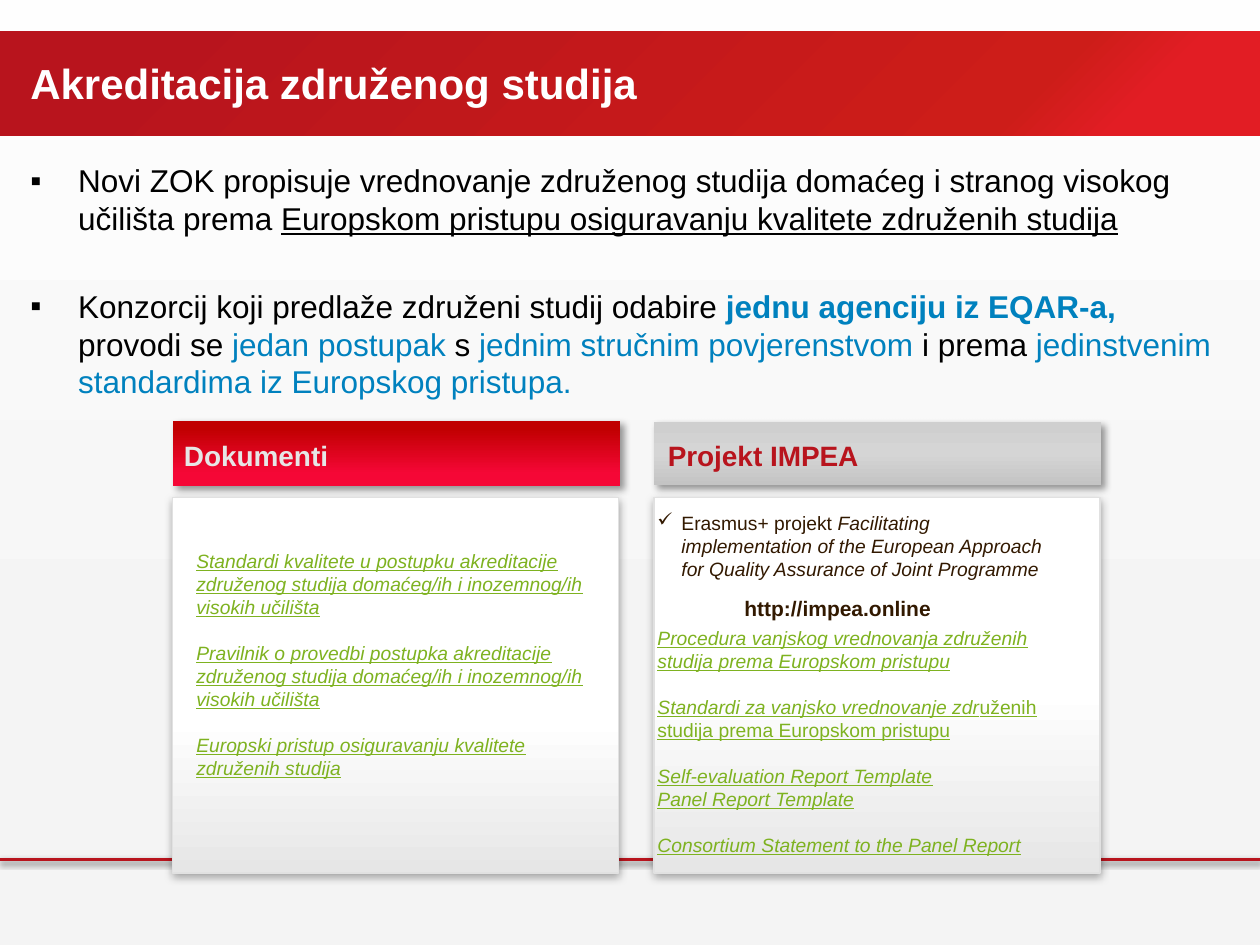
from dataclasses import dataclass
from typing import NamedTuple

from lxml.etree import SubElement
from pptx import Presentation
from pptx.dml.color import RGBColor
from pptx.enum.shapes import MSO_CONNECTOR as Connector, MSO_SHAPE as Shape
from pptx.enum.text import MSO_ANCHOR as Anchor, MSO_AUTO_SIZE as AutoSize, PP_ALIGN as Align
from pptx.oxml.ns import qn
from pptx.util import Inches, Pt

COLORS = {
    "red": "B8141D", "white": "FFFFFF", "black": "000000", "blue": "0081BE",
    "green": "7EB220", "brown": "321900", "pale": "E6E6E6", "edge": "E1E1E1",
}
PAGE_STOPS = [(0, "FEFEFE"), (74, "F4F4F4"), (83, "F4F4F4"), (100, "F7F7F7")]
BAND_STOPS = [(11, "E21D24"), (20, "CD1D19"), (89, "B8141D")]
GRAY_STOPS = [(0, "CFCFCF"), (50, "D5D5D5"), (100, "C4C4C4")]
RED_STOPS = [(11, "F50736"), (20, "F50736"), (89, "C00000")]


class Shadow(NamedTuple):
    alpha: int
    blur: float
    distance: float
    angle: int


LINE_SHADOW = Shadow(38, 3.1, 1.6, 90)
HEADER_SHADOW = Shadow(40, 4, 3, 45)
PANEL_SHADOW = Shadow(35, 5, 1.8, 90)


@dataclass
class Span:
    text: str
    color: str = "black"
    bold: bool = False
    italic: bool = False
    underline: bool = False


@dataclass
class Para:
    spans: list[Span]
    before: float = 0
    bullet: str = ""
    indent: float = 0


@dataclass
class Card:
    left: float
    header_top: float
    header_height: float
    stops: list
    angle: int
    panel_stop: int
    label_left: float
    label: Span


def link(text: str, before: float = 0) -> Para:
    return Para([Span(text, "green", italic=True, underline=True)], before)


def set_gradient(fill, holder, stops: list, angle: int) -> None:
    """Fill with (percent, colour) stops at a clockwise angle in degrees."""
    fill.gradient()
    gradient = holder.find(qn("a:gradFill"))
    for child in list(gradient):
        gradient.remove(child)
    stop_list = SubElement(gradient, qn("a:gsLst"))
    for percent, color in stops:
        stop = SubElement(stop_list, qn("a:gs"), pos=str(percent * 1000))
        SubElement(stop, qn("a:srgbClr"), val=color)
    SubElement(gradient, qn("a:lin"), ang=str(angle * 60000), scaled="0")


def add_shadow(properties, shadow: Shadow) -> None:
    effects = properties.find(qn("a:effectLst"))
    if effects is None:
        effects = SubElement(properties, qn("a:effectLst"))
    outer = SubElement(effects, qn("a:outerShdw"), blurRad=str(Pt(shadow.blur)),
                       dist=str(Pt(shadow.distance)), dir=str(shadow.angle * 60000),
                       algn="ctr", rotWithShape="0")
    color = SubElement(outer, qn("a:srgbClr"), val=COLORS["black"])
    SubElement(color, qn("a:alpha"), val=str(shadow.alpha * 1000))


def add_block(page, place: tuple, stops: list, angle: int,
              shadow: Shadow | None = None, edge: str = ""):
    block = page.shapes.add_shape(Shape.RECTANGLE, *map(Inches, place))
    set_gradient(block.fill, block.element.spPr, stops, angle)
    if edge:
        block.line.color.rgb = RGBColor.from_string(COLORS[edge])
        block.line.width = Pt(0.75)
    else:
        block.line.fill.background()
    block.shadow.inherit = False
    if shadow:
        add_shadow(block.element.spPr, shadow)


def write(box, paras: list[Para], size: float, **frame_format) -> None:
    frame = box.text_frame
    formats = {"word_wrap": True, "auto_size": AutoSize.NONE,
               "vertical_anchor": Anchor.TOP, **frame_format}
    for name, value in formats.items():
        setattr(frame, name, value)
    for index, item in enumerate(paras):
        para = frame.paragraphs[0] if index == 0 else frame.add_paragraph()
        properties = para._p.get_or_add_pPr()
        properties.set("marL", str(Inches(item.indent)))
        properties.set("indent", str(-Inches(item.indent)))
        if item.bullet:
            SubElement(properties, qn("a:buChar"), char=item.bullet)
        else:
            SubElement(properties, qn("a:buNone"))
        para.alignment = Align.LEFT
        para.space_before = Pt(item.before)
        for span in item.spans:
            run = para.add_run()
            run.text = span.text
            run.font.color.rgb = RGBColor.from_string(COLORS[span.color])
            for name, value in {"name": "Arial", "size": Pt(size), "bold": span.bold,
                                "italic": span.italic, "underline": span.underline}.items():
                setattr(run.font, name, value)


def add_text(page, place: tuple, paras: list[Para], size: float, **frame_format) -> None:
    write(page.shapes.add_textbox(*map(Inches, place)), paras, size, **frame_format)


def move(box, place: tuple) -> None:
    """Place a placeholder and bring it to the front."""
    for name, value in zip(("left", "top", "width", "height"), place):
        setattr(box, name, Inches(value))
    box.element.getparent().append(box.element)


def add_card(page, card: Card) -> None:
    add_block(page, (card.left, card.header_top, 3.55, card.header_height),
              card.stops, card.angle, HEADER_SHADOW)
    panel_stops = [(0, COLORS["pale"]), (card.panel_stop, COLORS["white"]), (100, COLORS["white"])]
    add_block(page, (card.left, 3.95, 3.54, 2.98), panel_stops, 270, PANEL_SHADOW, "edge")
    add_text(page, (card.label_left, 3.45, 2.67, 0.32), [Para([card.label])], 16,
             vertical_anchor=Anchor.MIDDLE, margin_left=0, margin_right=0)


BODY = [
    Para([Span("Novi ZOK propisuje vrednovanje združenog studija domaćeg i stranog "
               "visokog učilišta prema "),
          Span("Europskom pristupu osiguravanju kvalitete združenih studija", underline=True)],
         bullet="▪", indent=0.38),
    Para([Span("Konzorcij koji predlaže združeni studij odabire "),
          Span("jednu agenciju iz EQAR-a, ", "blue", bold=True),
          Span("provodi se "), Span("jedan postupak ", "blue"),
          Span("s "), Span("jednim stručnim povjerenstvom ", "blue"),
          Span("i prema "), Span("jedinstvenim standardima iz Europskog pristupa.", "blue")],
         before=28.5, bullet="▪", indent=0.38),
]
CARDS = [
    Card(5.19, 3.35, 0.5, GRAY_STOPS, 90, 49, 5.3, Span("Projekt IMPEA", "red", bold=True)),
    Card(1.37, 3.34, 0.52, RED_STOPS, 270, 41, 1.46, Span("Dokumenti", "pale", bold=True)),
]
GAP = 13
DOCUMENTS = [
    link("Standardi kvalitete u postupku akreditacije združenog studija "
         "domaćeg/ih i inozemnog/ih visokih učilišta"),
    link("Pravilnik o provedbi postupka akreditacije združenog studija "
         "domaćeg/ih i inozemnog/ih visokih učilišta", GAP),
    link("Europski pristup osiguravanju kvalitete združenih studija", GAP),
]
PROJECT = [
    Para([Span("Erasmus+ projekt ", "brown"),
          Span("Facilitating implementation of the European Approach for Quality "
               "Assurance of\u00a0Joint Programme", "brown", italic=True)],
         bullet="✓", indent=0.19),
    link("Procedura vanjskog vrednovanja združenih studija prema Europskom pristupu", 2 * GAP),
    Para([Span("Standardi za vanjsko vrednovanje zdr", "green", italic=True, underline=True),
          Span("uženih studija prema Europskom pristupu", "green", underline=True)], GAP),
    link("Self-evaluation Report Template", GAP),
    link("Panel Report Template"),
    link("Consortium Statement to the Panel Report", GAP),
]


def main() -> None:
    deck = Presentation()
    deck.slide_width, deck.slide_height = Inches(10), Inches(7.5)
    page = deck.slides.add_slide(deck.slide_layouts[1])
    background = page.background.fill
    background.solid()
    set_gradient(background, page.element.find(".//" + qn("p:bgPr")), PAGE_STOPS, 90)

    add_block(page, (0, 0.25, 10, 0.83), BAND_STOPS, 225)
    rule = page.shapes.add_connector(Connector.STRAIGHT, 0, Inches(6.82), Inches(10), Inches(6.82))
    rule.line.color.rgb = RGBColor.from_string(COLORS["red"])
    rule.line.width = Pt(2)
    add_shadow(rule.element.spPr, LINE_SHADOW)

    title, body = page.shapes.title, page.placeholders[1]
    move(title, (0.14, 0.38, 8.05, 0.62))
    write(title, [Para([Span("Akreditacija združenog studija", "white", bold=True)])], 24,
          vertical_anchor=Anchor.MIDDLE, margin_bottom=Inches(0.12))
    move(body, (0.14, 1.23, 9.66, 2.33))
    write(body, BODY, 18)

    for card in CARDS:
        add_card(page, card)
    add_text(page, (1.46, 4.31, 3.36, 2.32), DOCUMENTS, 11)
    add_text(page, (5.81, 4.68, 1.77, 0.3),
             [Para([Span("http://impea.online", "brown", bold=True)])], 12, word_wrap=False)
    add_text(page, (5.12, 4.01, 3.37, 3.4), PROJECT, 11)
    deck.save("out.pptx")


if __name__ == "__main__":
    main()
